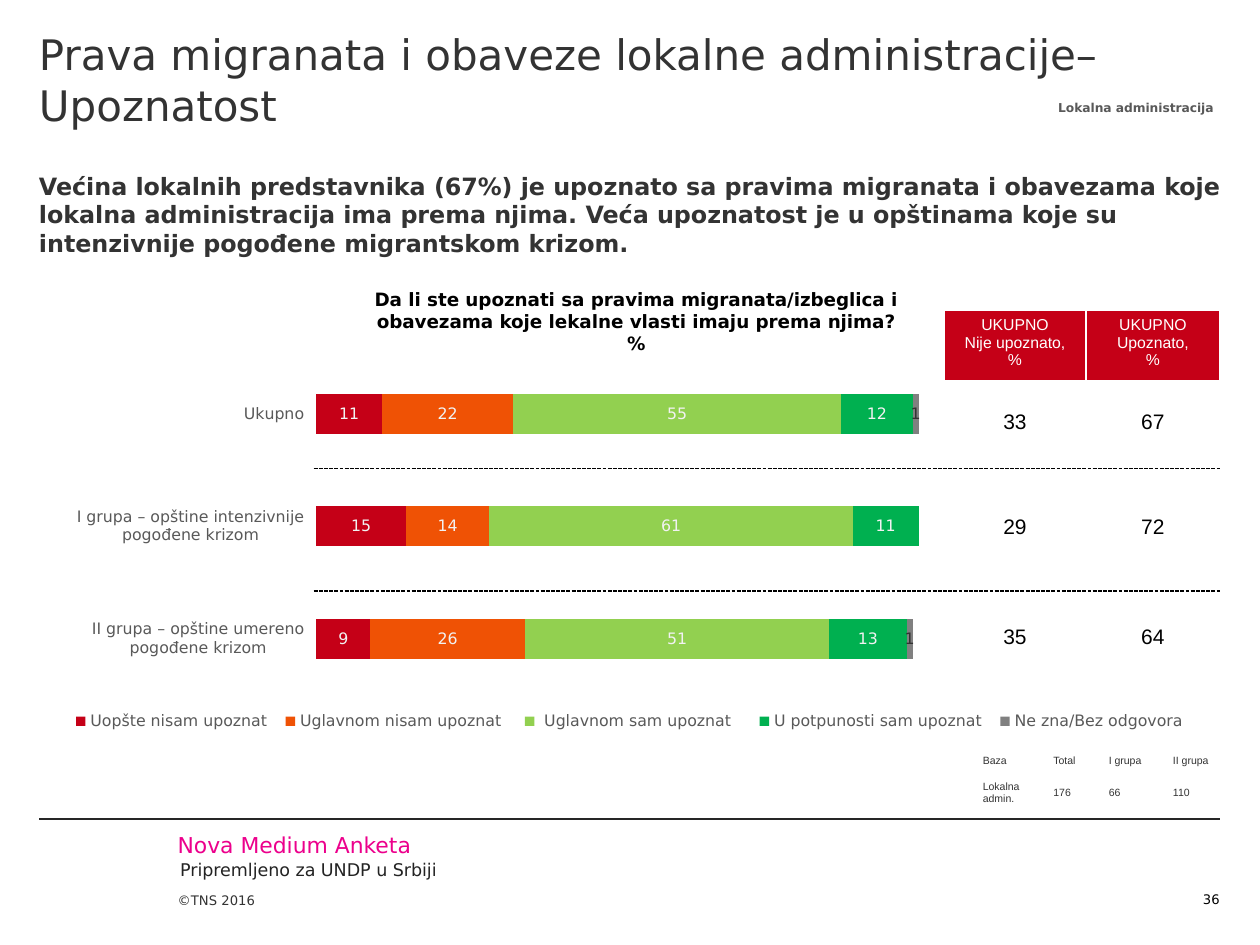
import pptx
import pptx.util
import pptx.chart.data
import pptx.dml.color
import pptx.enum.chart
import pptx.enum.dml
import pptx.enum.shapes
import pptx.enum.text
import pptx.oxml
import pptx.oxml.ns
from dataclasses import dataclass
from lxml import etree

Inches = pptx.util.Inches
Pt = pptx.util.Pt
ALIGN = pptx.enum.text.PP_ALIGN
ANCHOR = pptx.enum.text.MSO_ANCHOR
qn = pptx.oxml.ns.qn


def rgb(value):
    return pptx.dml.color.RGBColor.from_string(value)


@dataclass
class Theme:
    sans: str = "DejaVu Sans"
    arial: str = "Arial"
    ink: str = "333333"
    black: str = "000000"
    white: str = "FFFFFF"
    grey: str = "595959"
    rule: str = "262626"
    prepared: str = "232323"
    pink: str = "EC008C"
    red: str = "C50017"
    orange: str = "EF5205"
    lime: str = "92D050"
    green: str = "00B050"
    neutral: str = "808080"
    pale: str = "F2F2F2"
    title: float = 24
    lead: float = 13.6
    agency: float = 12.5
    total: float = 12
    question: float = 10.5
    client: float = 10
    label: float = 9
    small: float = 7.5
    tag: float = 7
    base: float = 6


class SlideBuilder:
    def __init__(self, slide, theme):
        self.s = slide
        self.t = theme

    def font(self, font, size, color, bold=False, name=None):
        font.name = name or self.t.sans
        font.size = Pt(size)
        font.bold = bold
        font.color.rgb = rgb(color)

    def text(self, box, text, size, color, bold=False, align=ALIGN.LEFT,
             anchor=ANCHOR.TOP, insets=(0, 0, 0, 0), indent=0, wrap=True):
        sp = self.s.shapes.add_textbox(*map(Inches, box))
        tf = sp.text_frame
        tf.word_wrap = wrap
        tf.vertical_anchor = anchor
        tf.margin_left, tf.margin_top, tf.margin_right, tf.margin_bottom = map(Inches, insets)
        p = tf.paragraphs[0]
        p.text = text
        p.alignment = align
        if indent:
            p._p.get_or_add_pPr().set("marL", str(Inches(indent)))
        self.font(p.runs[0].font, size, color, bold)

    def line(self, left, right, y, color, dash=None):
        c = self.s.shapes.add_connector(
            pptx.enum.shapes.MSO_CONNECTOR.STRAIGHT,
            Inches(left), Inches(y), Inches(right), Inches(y))
        c.line.color.rgb = rgb(color)
        c.line.width = Pt(0.75)
        if dash:
            c.line.dash_style = dash
        etree.SubElement(c._element.spPr, qn("a:effectLst"))

    def border(self, cell):
        tcPr = cell._tc.get_or_add_tcPr()
        for side in "LRTB":
            ln = etree.SubElement(tcPr, qn(f"a:ln{side}"), w=str(Pt(1)))
            fill = etree.SubElement(ln, qn("a:solidFill"))
            etree.SubElement(fill, qn("a:srgbClr"), val=self.t.white)

    def cell(self, cell, text, size, color, fill, align, anchor):
        self.border(cell)
        if fill:
            cell.fill.solid()
            cell.fill.fore_color.rgb = rgb(fill)
        else:
            cell.fill.background()
        cell.vertical_anchor = anchor
        cell.text_frame.text = text
        for p in cell.text_frame.paragraphs:
            p.alignment = align
            for r in p.runs:
                self.font(r.font, size, color, name=self.t.arial)

    def table(self, left, top, widths, heights, rows, size, color, align, header=None):
        tb = self.s.shapes.add_table(
            len(rows), len(widths), Inches(left), Inches(top),
            Inches(sum(widths)), Inches(sum(heights))).table
        tb.first_row = tb.horz_banding = False
        for col, width in zip(tb.columns, widths):
            col.width = Inches(width)
        for i, (row, height) in enumerate(zip(rows, heights)):
            tb.rows[i].height = Inches(height)
            for j, text in enumerate(row):
                if header and i == 0:
                    self.cell(tb.cell(i, j), text, self.t.label, self.t.white,
                              header, align, ANCHOR.TOP)
                else:
                    self.cell(tb.cell(i, j), text, size, color, None, align, ANCHOR.MIDDLE)

    def stacked_bars(self, box, categories, series, plot_box, legend_box, axis_max):
        data = pptx.chart.data.CategoryChartData(number_format="0")
        data.categories = categories
        for name, values, *_ in series:
            data.add_series(name, values)
        chart = self.s.shapes.add_chart(
            pptx.enum.chart.XL_CHART_TYPE.BAR_STACKED, *map(Inches, box), data).chart
        self.font(chart.font, self.t.client, self.t.black)
        chart.has_title = False
        chart.has_legend = True
        chart.legend.position = pptx.enum.chart.XL_LEGEND_POSITION.BOTTOM
        chart.legend.include_in_layout = False
        self.font(chart.legend.font, self.t.label, self.t.grey)
        cat = chart.category_axis
        cat.reverse_order = True
        cat.format.line.fill.background()
        self.font(cat.tick_labels.font, self.t.label, self.t.grey)
        val = chart.value_axis
        val.minimum_scale, val.maximum_scale = 0, axis_max
        val.has_major_gridlines = False
        val.visible = False
        plot = chart.plots[0]
        plot.gap_width, plot.overlap = 182, 100
        plot.vary_by_categories = False
        for ser, (_, _, color, label_color) in zip(plot.series, series):
            ser.format.fill.solid()
            ser.format.fill.fore_color.rgb = rgb(color)
            labels = ser.data_labels
            labels.show_value = True
            labels.number_format = "0;;"
            labels.number_format_is_linked = False
            self.font(labels.font, self.t.label, label_color)
        self.layout(chart._chartSpace.chart.plotArea, plot_box, 0, "inner")
        self.layout(chart.legend._element, legend_box, 1)

    def layout(self, parent, box, index, target=None):
        for old in parent.findall(qn("c:layout")):
            parent.remove(old)
        layout = etree.Element(qn("c:layout"))
        manual = etree.SubElement(layout, qn("c:manualLayout"))
        if target:
            etree.SubElement(manual, qn("c:layoutTarget"), val=target)
        for tag in ("xMode", "yMode"):
            etree.SubElement(manual, qn(f"c:{tag}"), val="edge")
        for tag, value in zip("xywh", box):
            etree.SubElement(manual, qn(f"c:{tag}"), val=str(value))
        parent.insert(index, layout)


def main():
    prs = pptx.Presentation()
    prs.slide_width, prs.slide_height = Inches(10), Inches(7.5)
    t = Theme()
    b = SlideBuilder(prs.slides.add_slide(prs.slide_layouts[6]), t)
    left, right = 0.31, 9.68
    width = right - left

    b.text((1.41, 6.92, 0.83, 0.29), "©TNS 2016", t.small, t.ink, anchor=ANCHOR.BOTTOM)
    b.line(left, right, 6.5, t.rule)
    b.text((1.41, 6.6, 3.31, 0.21), "Nova Medium Anketa", t.agency, t.pink)
    b.text((1.43, 6.82, 6.81, 0.17), "Pripremljeno za UNDP u Srbiji", t.client, t.prepared)
    b.text((left, 0, width, 1.13),
           "Prava migranata i obaveze lokalne administracije– Upoznatost",
           t.title, t.ink, insets=(0, 0.23, 0, 0))
    b.text((left, 1.13, width, 0.83),
           "Većina lokalnih predstavnika (67%) je upoznato sa pravima migranata i obavezama "
           "koje lokalna administracija ima prema njima. Veća upoznatost je u opštinama koje "
           "su intenzivnije pogođene migrantskom krizom.",
           t.lead, t.ink, bold=True, insets=(0, 0.23, 0, 0))

    b.stacked_bars(
        (left, 2.42, width, 4.08),
        ["Ukupno", "I grupa – opštine intenzivnije pogođene krizom",
         "II grupa – opštine umereno pogođene krizom"],
        [("Uopšte nisam upoznat", (11, 15, 9), t.red, t.pale),
         ("Uglavnom nisam upoznat ", (22, 14, 26), t.orange, t.pale),
         (" Uglavnom sam upoznat  ", (55, 61, 51), t.lime, t.pale),
         ("U potpunosti sam upoznat", (12, 11, 13), t.green, t.pale),
         ("Ne zna/Bez odgovora", (1, 0, 1), t.neutral, t.ink)],
        (0.235, 0.103, 0.51, 0.656), (0.02, 0.78, 0.96, 0.06), axis_max=101)

    b.table(7.49, 2.46, (1.13, 1.06), (0.56, 0.66, 1.01, 0.74),
            [("UKUPNO\nNije upoznato, %", "UKUPNO\nUpoznato,\n%"),
             ("33", "67"), ("29", "72"), ("35", "64")],
            t.total, t.black, ALIGN.CENTER, header=t.red)
    for y in (3.72, 4.69):
        b.line(2.49, right, y, t.black, pptx.enum.dml.MSO_LINE.SQUARE_DOT)
    b.text((2.3, 2.24, 5, 0.63),
           "Da li ste upoznati sa pravima migranata/izbeglica i obavezama koje lekalne "
           "vlasti imaju prema njima? %",
           t.question, t.black, bold=True, align=ALIGN.CENTER,
           insets=(0.1, 0.05, 0.1, 0.05), indent=0.5)
    b.text((9.13, 6.92, 0.55, 0.28), "36", t.small, t.black,
           align=ALIGN.RIGHT, anchor=ANCHOR.BOTTOM)
    b.table(7.7, 5.94, (0.56, 0.44, 0.51, 0.56), (0.19, 0.29),
            [("Baza", "Total", "I grupa", "II grupa"),
             ("Lokalna admin.", "176", "66", "110")],
            t.base, t.ink, ALIGN.LEFT)
    b.text((8.29, 0.75, 1.45, 0.22), "Lokalna administracija", t.tag, t.grey, bold=True,
           align=ALIGN.CENTER, insets=(0.1, 0.05, 0.1, 0.05), wrap=False)

    prs.save("out.pptx")


if __name__ == "__main__":
    main()
